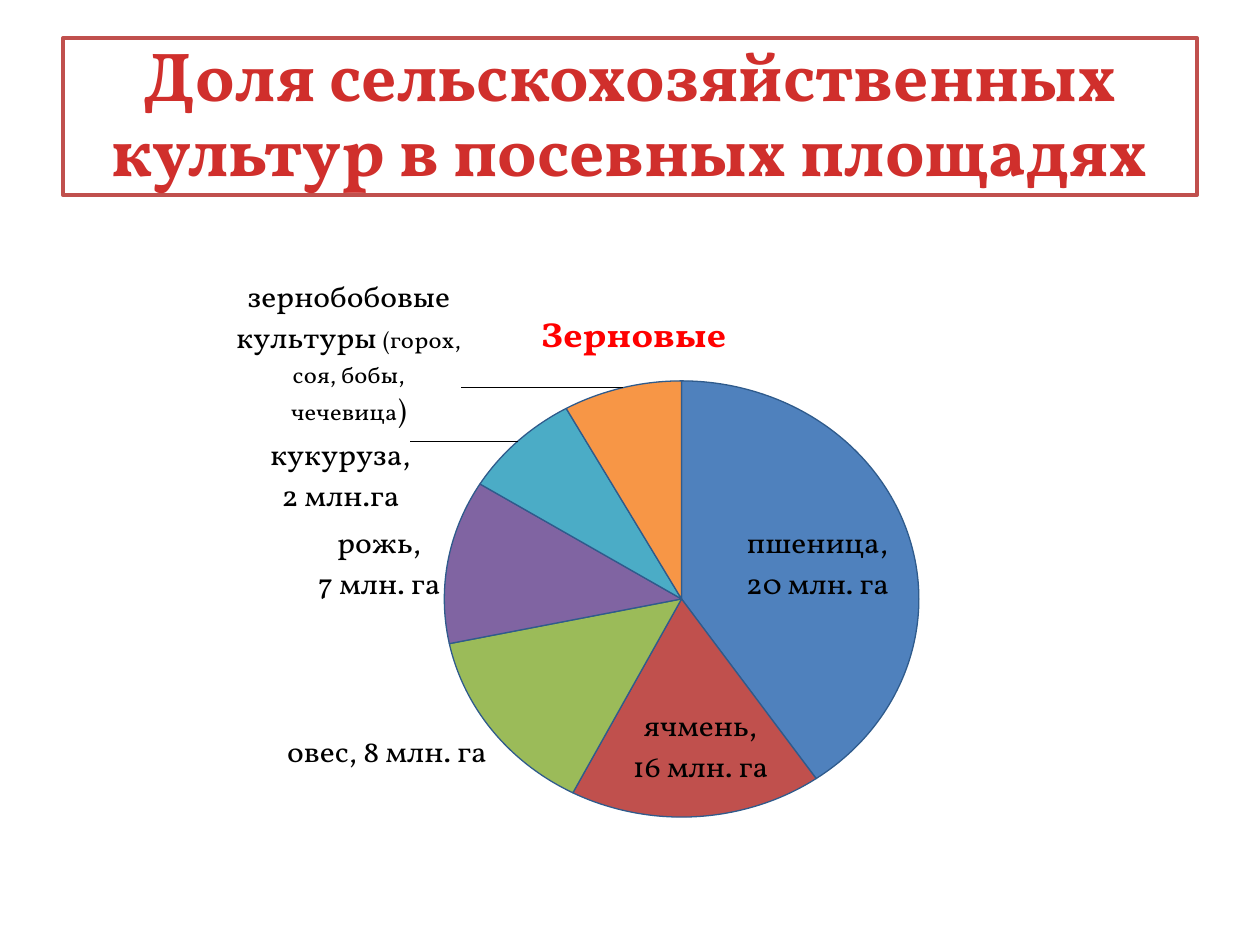
import pptx
import pptx.util
import pptx.dml.color
import pptx.chart.data
import pptx.enum.chart
import pptx.enum.text
import pptx.enum.shapes
import pptx.oxml
import pptx.oxml.ns

FONT = "Vollkorn"
HEAD = "Доля сельскохозяйственных культур в посевных площадях"
NAME = "Зерновые"
BIG, SMALL = 18, 14
IN, OUT = "CENTER", "OUTSIDE_END"
CROPS = [
    ("пшеница, 20 млн. га", 40, "4F81BD", IN, (0.02, 0),
     [[("пшеница,", BIG)], [("20 млн. га", BIG)]]),
    ("ячмень, 16 млн. га", 17, "C0504D", IN, (0.01, 0.07),
     [[("ячмень,", BIG)], [("16 млн. га", BIG)]]),
    ("овес, 8 млн. га", 14, "9BBB59", OUT, None,
     [[("овес, 8 млн. га", BIG)]]),
    ("рожь, 7 млн. га", 12, "8064A2", OUT, (0, 0.08),
     [[("рожь,", BIG)], [("7 млн. га", BIG)]]),
    ("кукуруза, 2 млн.га", 8, "4BACC6", OUT, (-0.09, 0.14),
     [[("кукуруза,", BIG)], [("2 млн.га", BIG)]]),
    ("зернобобовые культуры (горох, соя, бобы, чечевица)", 8, "F79646", OUT,
     (-0.14, 0.07),
     [[("зернобобовые культуры ", BIG), ("(горох, соя, бобы,", SMALL)],
      [("чечевица", SMALL), (")", BIG)]]),
]


def paint(color, code):
    color.rgb = pptx.dml.color.RGBColor.from_string(code)


def write(para, text, size, code, bold=False):
    run = para.add_run()
    run.text = text
    run.font.name = FONT
    run.font.size = pptx.util.Pt(size)
    run.font.bold = bold
    paint(run.font.color, code)


def layout(x, y, w=None, h=None, edge=False):
    tags = '<c:layoutTarget val="inner"/>' if w else ""
    if edge:
        tags += '<c:xMode val="edge"/><c:yMode val="edge"/>'
    for key, val in zip("xywh", (x, y, w, h)):
        if val is not None:
            tags += f'<c:{key} val="{val}"/>'
    space = pptx.oxml.ns.nsdecls("c")
    return pptx.oxml.parse_xml(
        f"<c:layout {space}><c:manualLayout>{tags}</c:manualLayout></c:layout>")


def place(node, item, after=None):
    for old in node.findall(pptx.oxml.ns.qn("c:layout")):
        node.remove(old)
    prev = node.find(pptx.oxml.ns.qn(after)) if after else None
    if prev is None:
        node.insert(0, item)
    else:
        prev.addnext(item)


def add_head(slide):
    box = slide.shapes.add_shape(
        pptx.enum.shapes.MSO_SHAPE.RECTANGLE,
        *map(pptx.util.Inches, (0.5, 0.3, 9, 1.25)))
    box.shadow.inherit = False
    box.fill.solid()
    paint(box.fill.fore_color, "FFFFFF")
    paint(box.line.color, "C0504D")
    box.line.width = pptx.util.Pt(2)
    frame = box.text_frame
    frame.word_wrap = True
    frame.vertical_anchor = pptx.enum.text.MSO_ANCHOR.MIDDLE
    para = frame.paragraphs[0]
    para.alignment = pptx.enum.text.PP_ALIGN.CENTER
    para.line_spacing = 0.9
    write(para, HEAD, 39.6, "D02F2C", True)


def add_pie(slide):
    data = pptx.chart.data.CategoryChartData()
    data.categories = [crop[0] for crop in CROPS]
    data.add_series("Series 1", [crop[1] for crop in CROPS])
    chart = slide.shapes.add_chart(
        pptx.enum.chart.XL_CHART_TYPE.PIE,
        *map(pptx.util.Inches, (0.55, 1.8, 9, 5.16)), data).chart
    chart.has_legend = False
    chart.font.name = "Calibri"
    chart.font.size = pptx.util.Pt(BIG)
    paint(chart.font.color, "000000")
    chart.has_title = True
    title = chart.chart_title
    write(title.text_frame.paragraphs[0], NAME, 21.6, "FF0000", True)
    title.include_in_layout = False
    place(title._element, layout(0.41, 0.04, edge=True), "c:tx")
    area = chart._chartSpace.chart.plotArea
    place(area, layout(0.12, 0.17, 0.84, 0.73, edge=True))

    plot = chart.plots[0]
    plot.vary_by_categories = True
    plot.has_data_labels = True
    plot.data_labels.show_category_name = True
    plot.data_labels.show_value = False
    spots = pptx.enum.chart.XL_LABEL_POSITION
    for i, (_, _, code, spot, shift, lines) in enumerate(CROPS):
        point = plot.series[0].points[i]
        point.format.fill.solid()
        paint(point.format.fill.fore_color, code)
        paint(point.format.line.color, "2F5B8C")
        point.format.line.width = pptx.util.Pt(0.75)
        label = point.data_label
        frame = label.text_frame
        for j, line in enumerate(lines):
            para = frame.add_paragraph() if j else frame.paragraphs[0]
            for text, size in line:
                write(para, text, size, "000000")
        label.position = getattr(spots, spot)
        if shift:
            place(label._dLbl, layout(*shift), "c:idx")


deck = pptx.Presentation()
deck.slide_width = pptx.util.Inches(10)
deck.slide_height = pptx.util.Inches(7.5)
page = deck.slides.add_slide(deck.slide_layouts[6])
add_head(page)
add_pie(page)
deck.save("out.pptx")
